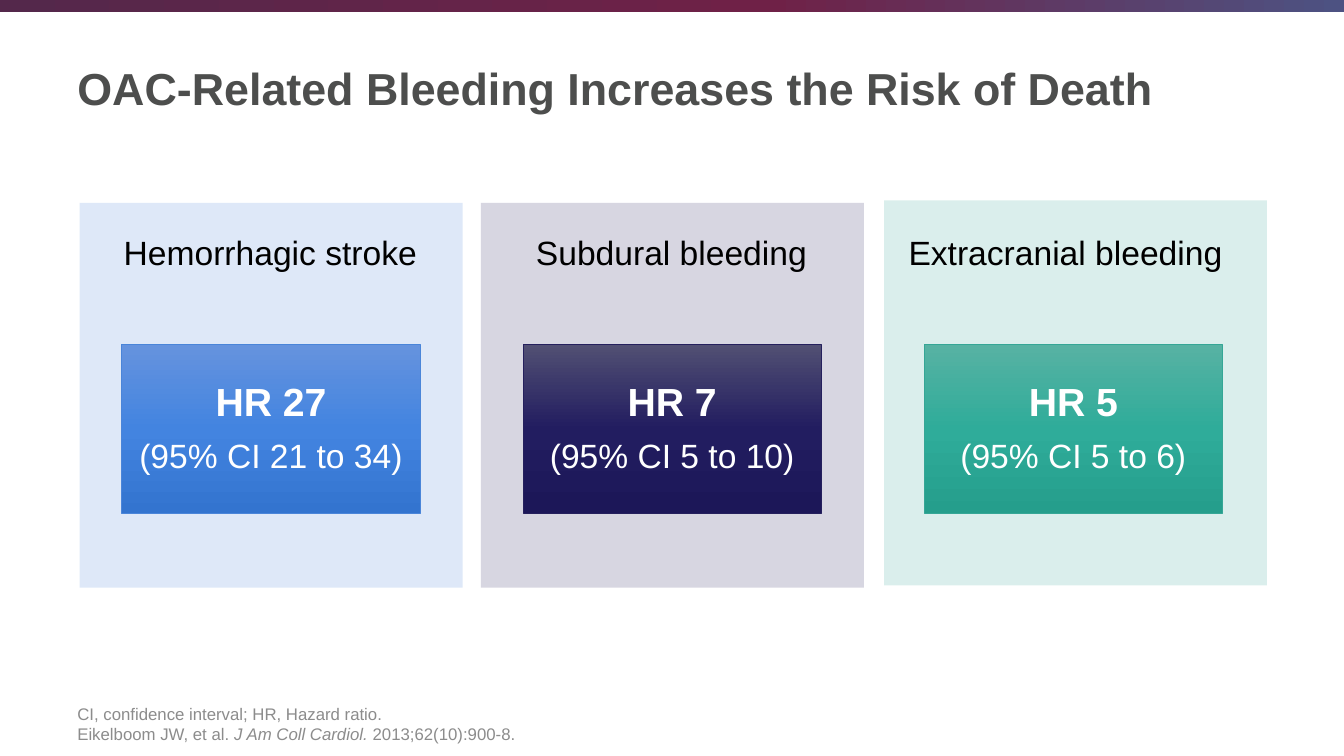
from lxml import etree
from pptx import Presentation
from pptx.dml.color import RGBColor
from pptx.enum.shapes import MSO_SHAPE
from pptx.enum.text import MSO_ANCHOR, MSO_AUTO_SIZE, PP_ALIGN
from pptx.oxml.ns import qn
from pptx.util import Cm, Pt

RECTANGLE = MSO_SHAPE.RECTANGLE
LEFT, CENTER = PP_ALIGN.LEFT, PP_ALIGN.CENTER
MIDDLE, BOTTOM = MSO_ANCHOR.MIDDLE, MSO_ANCHOR.BOTTOM
NO_FIT = MSO_AUTO_SIZE.NONE

FONT = "Arial"
SLIDE_WIDTH, SLIDE_HEIGHT = 33.87, 19.05
RESULT_LEFT, RESULT_STEP = 3.07, 10.11
COLORS = {
    "title": "4D4E4D", "note": "8C8C8C", "black": "000000", "white": "FFFFFF",
    "blue": "4A85D9", "navy": "25205D", "teal": "35A696",
}
GRADIENTS = {
    "band": [(0, "54284B"), (57, "6F2147"), (100, "4D5282")],
    "blue": [(0, "6593DE"), (50, "4384E0"), (100, "3374CF")],
    "navy": [(0, "514F73"), (50, "221D60"), (100, "1C1758")],
    "teal": [(0, "57B2A3"), (50, "2FAC9A"), (100, "259E8C")],
}
CARDS = [
    ("blue", "Hemorrhagic stroke", "HR 27", "(95% CI 21 to 34)", (2.01, 5.11), 2.49),
    ("navy", "Subdural bleeding", "HR 7", "(95% CI 5 to 10)", (12.12, 5.11), 12.6),
    ("teal", "Extracranial bleeding", "HR 5", "(95% CI 5 to 6)", (22.28, 5.05), 22.53),
]


def set_frame(frame, anchor, insets=(0.25, 0.13, 0.25, 0.13)):
    """Set wrapping, anchor and insets (left, top, right, bottom) of a text frame."""
    frame.word_wrap = True
    frame.auto_size = NO_FIT
    frame.vertical_anchor = anchor
    frame.margin_left, frame.margin_top, frame.margin_right, frame.margin_bottom = map(Cm, insets)


def add_text(para, text, *, size, color, bold=False, italic=False):
    """Append a formatted span of text to a paragraph."""
    span = para.add_run()
    span.text = text
    span.font.name = FONT
    span.font.size = Pt(size)
    span.font.bold = bold
    span.font.italic = italic
    span.font.color.rgb = RGBColor.from_string(COLORS[color])


def center_lines(para):
    """Give a card paragraph its alignment and spacing."""
    para.alignment = CENTER
    para.line_spacing = 0.9
    para.space_after = Pt(10)


def add_box(shapes, left, top, width, height):
    """Add a plain rectangle without shadow or outline."""
    box = shapes.add_shape(RECTANGLE, Cm(left), Cm(top), Cm(width), Cm(height))
    box.shadow.inherit = False
    box.line.fill.background()
    return box


def fill_gradient(box, stops, angle):
    """Fill a shape with a linear gradient of any number of stops."""
    box.fill.gradient()
    box.fill.gradient_angle = angle
    stop_list = box.element.spPr.find(qn("a:gradFill")).find(qn("a:gsLst"))
    for old_stop in list(stop_list):
        stop_list.remove(old_stop)
    for position, color in stops:
        stop = etree.SubElement(stop_list, qn("a:gs"), pos=str(position * 1000))
        etree.SubElement(stop, qn("a:srgbClr"), val=color)


def fill_tint(box, color, percent):
    """Fill a shape with a partly transparent colour."""
    box.fill.solid()
    box.fill.fore_color.rgb = RGBColor.from_string(COLORS[color])
    solid = box.element.spPr.find(qn("a:solidFill"))
    etree.SubElement(solid[0], qn("a:alpha"), val=str(percent * 1000))


def add_title(page, text):
    """Place and format the slide title."""
    title = page.shapes.title
    title.left, title.top, title.width, title.height = Cm(1.7), Cm(0.56), Cm(29.85), Cm(3.3)
    set_frame(title.text_frame, MIDDLE)
    para = title.text_frame.paragraphs[0]
    para.alignment = LEFT
    add_text(para, text, size=32, color="title", bold=True)


def add_footnote(page):
    """Add the abbreviations and the reference."""
    box = page.shapes.add_textbox(Cm(1.7), Cm(17.65), Cm(29.85), Cm(1.22))
    set_frame(box.text_frame, BOTTOM)
    para = box.text_frame.paragraphs[0]
    style = {"size": 12, "color": "note"}
    add_text(para, "CI, confidence interval; HR, Hazard ratio.", **style)
    para.add_line_break()
    add_text(para, "Eikelboom JW, et al. ", **style)
    add_text(para, "J Am Coll Cardiol. ", italic=True, **style)
    add_text(para, "2013;62(10):900-8.", **style)


def add_card(page, result_left, color, heading, ratio, interval, panel_corner, heading_left):
    """Add a tinted panel with its heading and hazard ratio box."""
    shapes = page.shapes.add_group_shape().shapes
    panel = add_box(shapes, *panel_corner, 9.65, 9.7)
    fill_tint(panel, color, 18)

    label = shapes.add_textbox(Cm(heading_left), Cm(5.82), Cm(8.64), Cm(8.26))
    set_frame(label.text_frame, MIDDLE, (0.3, 0.3, 0.3, 7.37))
    para = label.text_frame.paragraphs[0]
    center_lines(para)
    add_text(para, heading, size=24, color="black")

    result = add_box(shapes, result_left, 8.69, 7.52, 4.24)
    fill_gradient(result, GRADIENTS[color], 270)
    result.line.color.rgb = RGBColor.from_string(COLORS[color])
    result.line.width = Pt(0.5)
    frame = result.text_frame
    set_frame(frame, MIDDLE, (0.41, 0.36, 0.41, 0.36))
    for para, text, size, bold in (
        (frame.paragraphs[0], ratio, 28, True),
        (frame.add_paragraph(), interval, 24, False),
    ):
        center_lines(para)
        add_text(para, text, size=size, color="white", bold=bold)


def main():
    """Build and save the slide."""
    deck = Presentation()
    deck.slide_width, deck.slide_height = Cm(SLIDE_WIDTH), Cm(SLIDE_HEIGHT)
    page = deck.slides.add_slide(deck.slide_layouts[5])
    band = add_box(page.shapes, 0, 0, SLIDE_WIDTH, 0.3)
    fill_gradient(band, GRADIENTS["band"], 0)
    add_title(page, "OAC-Related Bleeding Increases the Risk of Death")
    add_footnote(page)
    for index, card in enumerate(CARDS):
        add_card(page, RESULT_LEFT + index * RESULT_STEP, *card)
    deck.save("out.pptx")


if __name__ == "__main__":
    main()
